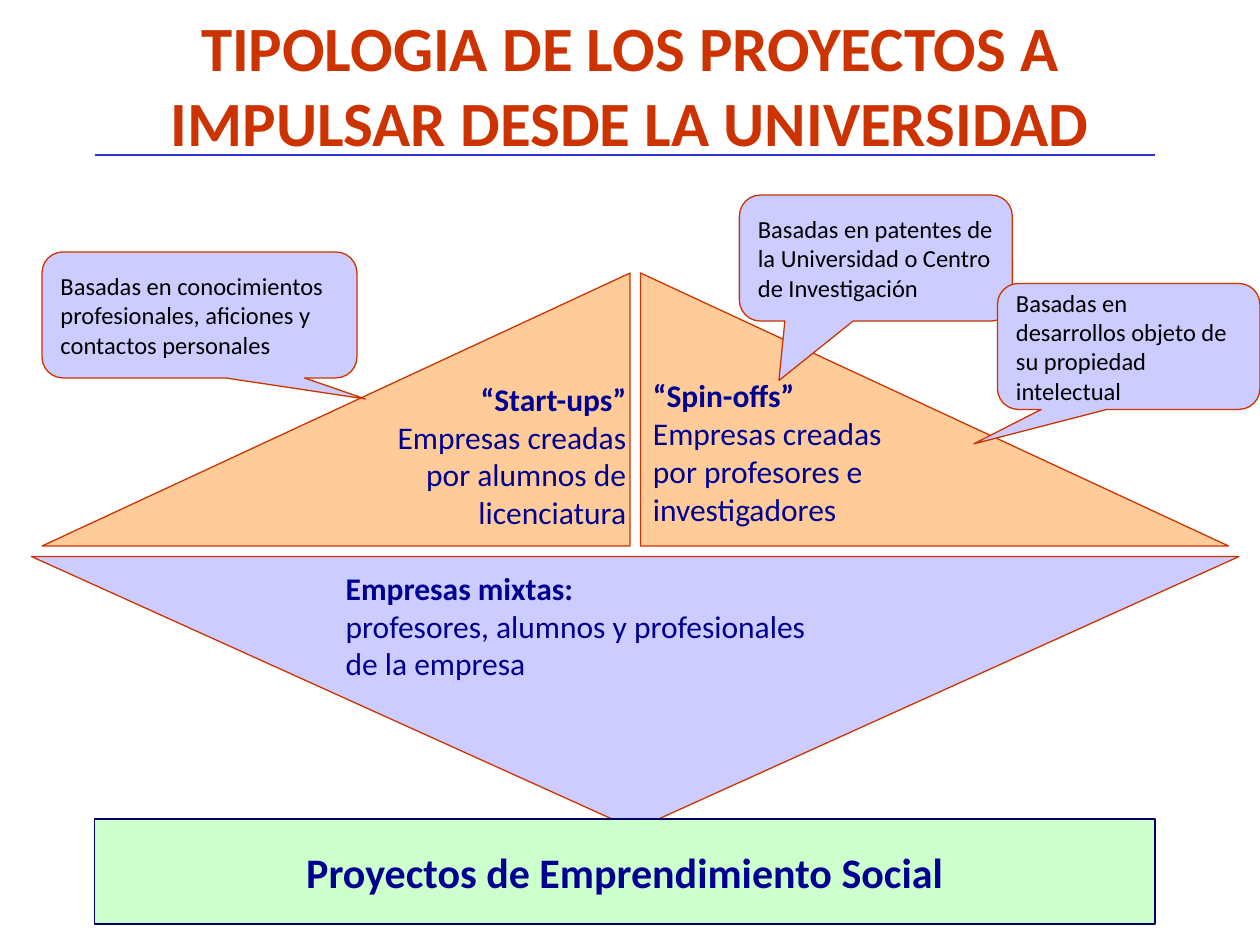
from pptx import Presentation
from pptx.dml.color import RGBColor
from pptx.enum.shapes import MSO_CONNECTOR, MSO_SHAPE
from pptx.enum.text import MSO_ANCHOR, MSO_AUTO_SIZE, PP_ALIGN
from pptx.oxml.ns import qn
from pptx.util import Pt
from lxml import etree

COLORS = {
    "title": "CC3300",
    "rule": "3333CC",
    "orange": "FFCC99",
    "lavender": "CCCCFF",
    "green": "CCFFCC",
    "navy": "000066",
    "blue": "000090",
    "black": "000000",
}


def write_text(frame, lines, size=18, color="blue", bold_lines=1,
               align=PP_ALIGN.LEFT, anchor=MSO_ANCHOR.TOP):
    frame.word_wrap = True
    frame.auto_size = MSO_AUTO_SIZE.NONE
    frame.vertical_anchor = anchor
    for index, line in enumerate(lines):
        paragraph = frame.paragraphs[0] if index == 0 else frame.add_paragraph()
        paragraph.alignment = align
        run = paragraph.add_run()
        run.text = line
        run.font.name = "Calibri"
        run.font.size = Pt(size)
        run.font.bold = index < bold_lines
        run.font.color.rgb = RGBColor.from_string(COLORS[color])


def add_filled_shape(kind, left, top, width, height, fill, line="title"):
    shape = slide.shapes.add_shape(kind, Pt(left), Pt(top), Pt(width), Pt(height))
    shape.shadow.inherit = False
    shape.fill.solid()
    shape.fill.fore_color.rgb = RGBColor.from_string(COLORS[fill])
    shape.line.color.rgb = RGBColor.from_string(COLORS[line])
    shape.line.width = Pt(0.75)
    return shape


presentation = Presentation()
presentation.slide_width = Pt(720)
presentation.slide_height = Pt(540)
slide = presentation.slides.add_slide(presentation.slide_layouts[5])

rule = slide.shapes.add_connector(MSO_CONNECTOR.STRAIGHT, Pt(54), Pt(88.5), Pt(660), Pt(88.5))
rule.line.color.rgb = RGBColor.from_string(COLORS["rule"])
rule.line.width = Pt(0.75)
etree.SubElement(rule._element.spPr, qn("a:effectLst"))

title = slide.shapes.title
title.left, title.top, title.width, title.height = Pt(54), Pt(15), Pt(612), Pt(66)
write_text(title.text_frame, ["TIPOLOGIA DE LOS PROYECTOS A IMPULSAR DESDE LA UNIVERSIDAD"],
           size=36, color="title", align=PP_ALIGN.CENTER, anchor=MSO_ANCHOR.MIDDLE)

triangles = [
    (MSO_SHAPE.RIGHT_TRIANGLE, 366, 156, 336, 156, 0, "orange"),
    (MSO_SHAPE.RIGHT_TRIANGLE, 114, 66, 156, 336, 270, "orange"),
    (MSO_SHAPE.ISOSCELES_TRIANGLE, 18, 318, 690, 156, 180, "lavender"),
]
for kind, left, top, width, height, rotation, fill in triangles:
    triangle = add_filled_shape(kind, left, top, width, height, fill)
    triangle.rotation = rotation

callouts = [
    (422.5, 111.5, 156, (-0.355, 0.972),
     "Basadas en patentes de la Universidad o Centro de Investigación"),
    (570, 162, 150, (-0.59, 0.773),
     "Basadas en desarrollos objeto de su propiedad intelectual"),
    (24, 144, 180, (0.527, 0.667),
     "Basadas en conocimientos profesionales, aficiones y contactos personales"),
]
for left, top, width, tip, text in callouts:
    callout = add_filled_shape(MSO_SHAPE.ROUNDED_RECTANGULAR_CALLOUT,
                               left, top, width, 72, "lavender")
    callout.adjustments[0], callout.adjustments[1] = tip
    write_text(callout.text_frame, [text], size=14, color="black", bold_lines=0,
               anchor=MSO_ANCHOR.MIDDLE)

base = add_filled_shape(MSO_SHAPE.RECTANGLE, 54, 468, 606, 60, "green", line="navy")
write_text(base.text_frame, ["Proyectos de Emprendimiento Social"], size=24,
           align=PP_ALIGN.CENTER, anchor=MSO_ANCHOR.MIDDLE)

groups = [
    (366, 211.5, 198, PP_ALIGN.LEFT,
     ["“Spin-offs”", "Empresas creadas", "por profesores e", "investigadores"]),
    (167, 213.5, 198, PP_ALIGN.RIGHT,
     ["“Start-ups”", "Empresas creadas", "por alumnos de", "licenciatura"]),
    (190.5, 321.5, 330, PP_ALIGN.LEFT,
     ["Empresas mixtas:", "profesores, alumnos y profesionales", "de la empresa"]),
]
for left, top, width, align, lines in groups:
    label = slide.shapes.add_textbox(Pt(left), Pt(top), Pt(width), Pt(22 * len(lines) + 7))
    write_text(label.text_frame, lines, align=align)

presentation.save("out.pptx")
